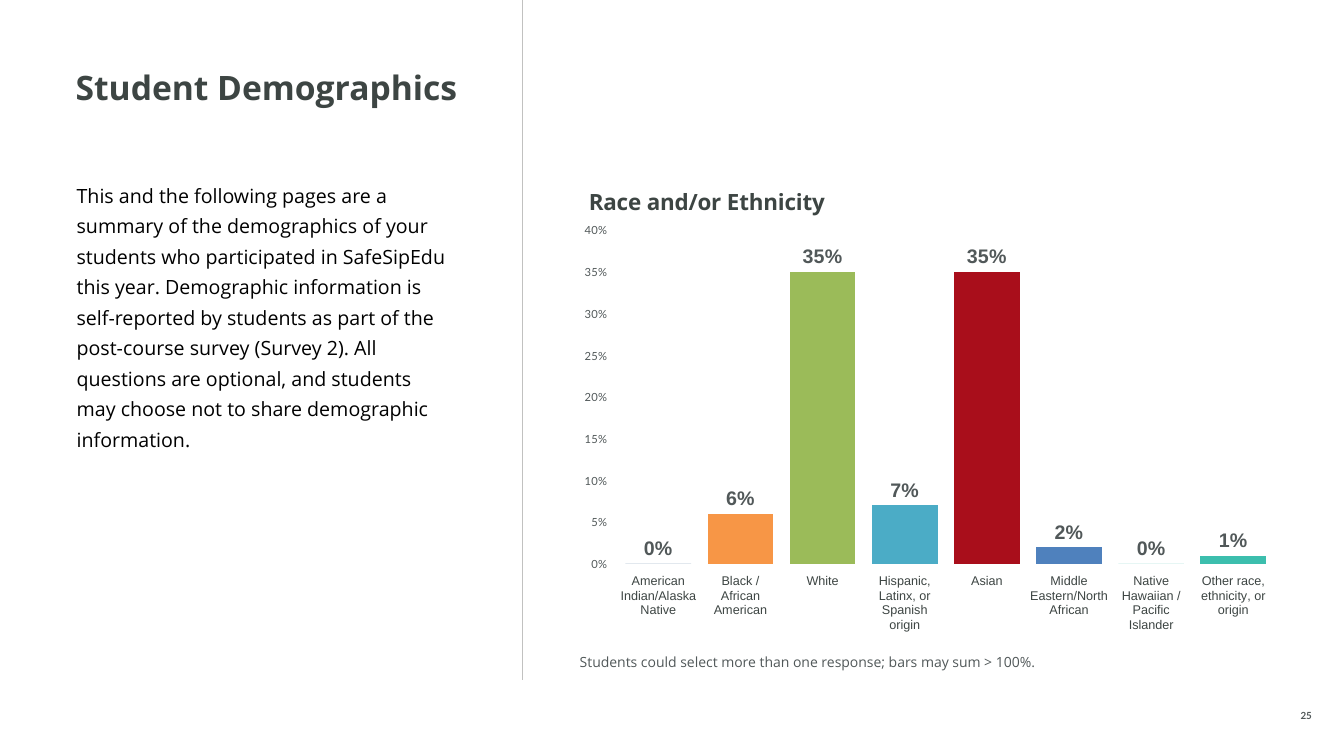
import pptx
import pptx.chart.data
import pptx.dml.color
import pptx.enum.chart
import pptx.enum.shapes
import pptx.enum.text
import pptx.oxml
import pptx.oxml.ns
import pptx.util
from lxml import etree

WIDTH, HEIGHT = 13.33, 7.5
DIVIDER_X = 5.18
DARK, GREY, BLACK, RULE = "3D4543", "515859", "000000", "C1C1C0"
SERIES_COLOR = "3CBEAD"
ANCHOR = pptx.enum.text.MSO_ANCHOR

INTRO = (
    "This and the following pages are a summary of the demographics of your "
    "students who participated in SafeSipEdu this year. Demographic information "
    "is self-reported by students as part of the post-course survey (Survey 2). "
    "All questions are optional, and students may choose not to share "
    "demographic information."
)

# Category, share of students, bar colour
GROUPS = [
    ("American Indian/Alaska Native", 0, "1F497D"),
    ("Black / African American", 0.06, "F79646"),
    ("White", 0.35, "9BBB59"),
    ("Hispanic, Latinx, or Spanish origin", 0.07, "4BACC6"),
    ("Asian", 0.35, "A90E1B"),
    ("Middle Eastern/North African", 0.02, "4F81BD"),
    ("Native Hawaiian / Pacific Islander", 0, SERIES_COLOR),
    ("Other race, ethnicity, or origin", 0.01, SERIES_COLOR),
]


def rgb(color):
    return pptx.dml.color.RGBColor.from_string(color)


def inches(box):
    return [pptx.util.Inches(length) for length in box]


def style_font(font, name, size, color, bold=False):
    font.name = name
    font.size = pptx.util.Pt(size)
    font.bold = bold
    font.color.rgb = rgb(color)


def fill_text(shape, text, anchor):
    """Put one paragraph in a shape without margins and return it."""
    frame = shape.text_frame
    frame.word_wrap = True
    frame.auto_size = pptx.enum.text.MSO_AUTO_SIZE.NONE
    frame.vertical_anchor = anchor
    frame.margin_left = frame.margin_right = 0
    frame.margin_top = frame.margin_bottom = 0
    frame.text = text
    paragraph = frame.paragraphs[0]
    paragraph.alignment = pptx.enum.text.PP_ALIGN.LEFT
    return paragraph


def place(shape, box):
    shape.left, shape.top, shape.width, shape.height = inches(box)


def add_divider(slide, x, bottom):
    line = slide.shapes.add_connector(
        pptx.enum.shapes.MSO_CONNECTOR.STRAIGHT, *inches((x, 0, x, bottom)))
    line.line.color.rgb = rgb(RULE)
    line.line.width = pptx.util.Pt(1)
    etree.SubElement(line._element.spPr, pptx.oxml.ns.qn("a:effectLst"))


def add_title(slide, box):
    title = slide.shapes.title
    place(title, box)
    paragraph = fill_text(title, "Student Demographics", ANCHOR.TOP)
    paragraph.line_spacing = 0.9
    style_font(paragraph.font, "Open Sans", 24, DARK, True)


def add_intro(slide, box):
    body = slide.placeholders[1]
    place(body, box)
    paragraph = fill_text(body, INTRO, ANCHOR.TOP)
    paragraph.line_spacing = 1.3
    paragraph.space_before = pptx.util.Pt(0)
    properties = paragraph._p.get_or_add_pPr()
    properties.set("marL", str(pptx.util.Inches(0.01)))
    properties.set("indent", "0")
    etree.SubElement(properties, pptx.oxml.ns.qn("a:buNone"))
    style_font(paragraph.font, "Open Sans", 14, BLACK)


def add_small_text(slide, box, text, name, size, bold=False, centred=False):
    shape = slide.shapes.add_textbox(*inches(box))
    paragraph = fill_text(shape, text, ANCHOR.BOTTOM)
    if centred:
        paragraph.alignment = pptx.enum.text.PP_ALIGN.CENTER
    style_font(paragraph.font, name, size, GREY, bold)


def set_layout(element, index, **settings):
    """Give a chart part a manual layout, at the given child index."""
    for old in element.findall(pptx.oxml.ns.qn("c:layout")):
        element.remove(old)
    layout = etree.Element(pptx.oxml.ns.qn("c:layout"))
    manual = etree.SubElement(layout, pptx.oxml.ns.qn("c:manualLayout"))
    for key, value in settings.items():
        etree.SubElement(manual, pptx.oxml.ns.qn(f"c:{key}")).set("val", str(value))
    element.insert(index, layout)


def style_axis(axis, name, size, color):
    axis.has_major_gridlines = False
    axis.major_tick_mark = pptx.enum.chart.XL_TICK_MARK.OUTSIDE
    axis.format.line.fill.background()
    style_font(axis.tick_labels.font, name, size, color)


def add_ethnicity_chart(slide, box):
    names, shares, colors = zip(*GROUPS)
    data = pptx.chart.data.CategoryChartData(number_format="0%")
    data.categories = names
    data.add_series("Series 1", shares)
    chart = slide.shapes.add_chart(
        pptx.enum.chart.XL_CHART_TYPE.COLUMN_CLUSTERED, *inches(box), data).chart
    style_font(chart.font, "Lato", 8, GREY)
    chart.has_legend = False

    title = chart.chart_title
    title.text_frame.text = "Race and/or Ethnicity"
    style_font(title.text_frame.paragraphs[0].font, "Open Sans", 16, DARK, True)
    set_layout(title._element, 1, xMode="edge", yMode="edge", x=0.06, y=0.03)
    plot_area = chart._chartSpace.chart.plotArea
    set_layout(plot_area, 0, layoutTarget="inner", xMode="edge", yMode="edge",
               x=0.103, y=0.132, w=0.869, h=0.69)

    style_axis(chart.category_axis, "Arial", 9, DARK)
    values = chart.value_axis
    style_axis(values, "Lato", 8, GREY)
    values.minimum_scale, values.maximum_scale = 0, 0.4
    values.major_unit = 0.05
    values.tick_labels.number_format = "0%"
    values.tick_labels.number_format_is_linked = False

    plot = chart.plots[0]
    plot.gap_width = 25
    plot.vary_by_categories = False
    series = plot.series[0]
    series.format.fill.solid()
    series.format.fill.fore_color.rgb = rgb(SERIES_COLOR)
    for index, color in enumerate(colors):
        if color != SERIES_COLOR:
            fill = series.points[index].format.fill
            fill.solid()
            fill.fore_color.rgb = rgb(color)

    labels = series.data_labels
    labels.show_value = True
    labels.position = pptx.enum.chart.XL_LABEL_POSITION.OUTSIDE_END
    labels.number_format = "0%"
    labels.number_format_is_linked = False
    style_font(labels.font, "Arial", 14, GREY, True)


def build_demographics_slide(presentation):
    slide = presentation.slides.add_slide(presentation.slide_layouts[1])
    margin = 0.75
    add_divider(slide, DIVIDER_X, 0.9 * HEIGHT)
    add_title(slide, (margin, 0.71, 3.94, 0.7))
    add_intro(slide, (margin, 1.75, 3.73, 3.07))
    add_ethnicity_chart(slide, (5.35, 1.65, 7.5, 4.8))
    add_small_text(slide, (5.75, 6.48, 4.61, 0.17),
                   "Students could select more than one response; bars may sum > 100%.",
                   "Open Sans", 10)
    add_small_text(slide, (12.7, 7.01, 0.51, 0.15), "25", "Lato", 7,
                   bold=True, centred=True)


def main():
    presentation = pptx.Presentation()
    presentation.slide_width, presentation.slide_height = inches((WIDTH, HEIGHT))
    build_demographics_slide(presentation)
    presentation.save("out.pptx")


if __name__ == "__main__":
    main()
